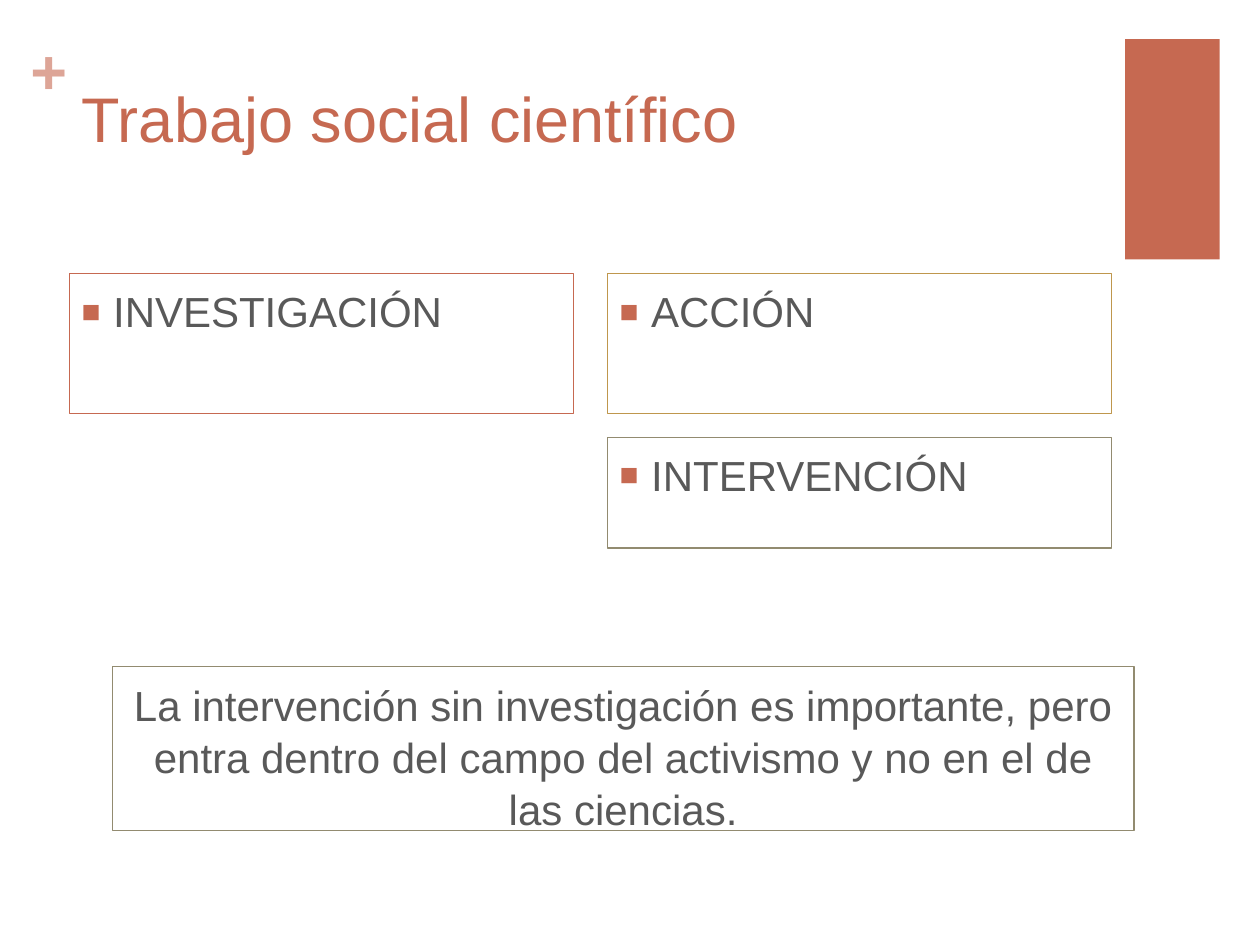
from dataclasses import dataclass
from typing import Optional

from lxml.etree import SubElement
from pptx import Presentation
from pptx.dml.color import RGBColor
from pptx.enum.shapes import MSO_SHAPE
from pptx.enum.text import MSO_ANCHOR, MSO_AUTO_SIZE, PP_ALIGN
from pptx.oxml.ns import qn
from pptx.util import Pt


@dataclass(frozen=True)
class Theme:
    font: str = "Arial"
    accent: str = "C66951"
    accent_light: str = "DDA597"
    gold: str = "BF974D"
    olive: str = "928B70"
    text: str = "595959"
    title_size: float = 36
    body_size: float = 24
    line_width: float = 0.75


@dataclass(frozen=True)
class Box:
    text: str
    left: float
    top: float
    width: float
    height: float
    line: str
    bulleted: bool = True


THEME = Theme()
LEFT_COL, RIGHT_COL, COL_WIDTH = 39.6, 347.04, 288
BOXES = [
    Box("ACCIÓN", RIGHT_COL, 156.24, COL_WIDTH, 79.92, THEME.gold),
    Box("INVESTIGACIÓN", LEFT_COL, 156.24, COL_WIDTH, 79.92, THEME.accent),
    Box("INTERVENCIÓN", RIGHT_COL, 249.84, COL_WIDTH, 63.36, THEME.olive),
    Box("La intervención sin investigación es importante, pero entra dentro del "
        "campo del activismo y no en el de las ciencias.",
        64.08, 380.88, 583.92, 93.6, THEME.olive, bulleted=False),
]


def add_run(p, text: str, size: float, color: str, bold: bool = False) -> None:
    r = p.add_run()
    r.text = text
    r.font.name = THEME.font
    r.font.size = Pt(size)
    r.font.bold = bold
    r.font.color.rgb = RGBColor.from_string(color)


def add_bullet(p) -> None:
    """Give the paragraph a square accent bullet with a hanging indent."""
    pPr = p._p.get_or_add_pPr()
    pPr.set("marL", str(Pt(18)))
    pPr.set("indent", str(Pt(-18)))
    SubElement(SubElement(pPr, qn("a:buClr")), qn("a:srgbClr")).set("val", THEME.accent)
    SubElement(pPr, qn("a:buSzPct")).set("val", "75000")
    SubElement(pPr, qn("a:buFont")).set("typeface", THEME.font)
    SubElement(pPr, qn("a:buChar")).set("char", "■")


def add_rect(s, left: float, top: float, width: float, height: float,
             fill: Optional[str] = None, line: Optional[str] = None):
    sp = s.shapes.add_shape(MSO_SHAPE.RECTANGLE, Pt(left), Pt(top), Pt(width), Pt(height))
    sp.shadow.inherit = False
    if fill:
        sp.fill.solid()
        sp.fill.fore_color.rgb = RGBColor.from_string(fill)
    else:
        sp.fill.background()
    if line:
        sp.line.color.rgb = RGBColor.from_string(line)
        sp.line.width = Pt(THEME.line_width)
    else:
        sp.line.fill.background()
    return sp


def add_box(s, box: Box) -> None:
    sp = add_rect(s, box.left, box.top, box.width, box.height, line=box.line)
    tf = sp.text_frame
    tf.word_wrap = True
    tf.vertical_anchor = MSO_ANCHOR.TOP
    tf.margin_top = Pt(6)
    p = tf.paragraphs[0]
    p.alignment = PP_ALIGN.LEFT if box.bulleted else PP_ALIGN.CENTER
    p.line_spacing = 1.04
    p.space_before = Pt(20)
    if box.bulleted:
        add_bullet(p)
    add_run(p, box.text, THEME.body_size, THEME.text)


def add_plus(s) -> None:
    tf = s.shapes.add_textbox(Pt(17.28), Pt(18), Pt(20.88), Pt(43.92)).text_frame
    tf.margin_left = tf.margin_top = tf.margin_right = tf.margin_bottom = 0
    add_run(tf.paragraphs[0], "+", THEME.title_size, THEME.accent_light, bold=True)


def set_title(s, text: str) -> None:
    sp = s.shapes.title
    sp.left, sp.top, sp.width, sp.height = Pt(LEFT_COL), Pt(38.16), Pt(594.72), Pt(87.84)
    tf = sp.text_frame
    tf.auto_size = MSO_AUTO_SIZE.NONE
    tf.vertical_anchor = MSO_ANCHOR.TOP
    tf.margin_top = Pt(7.2)
    p = tf.paragraphs[0]
    p.alignment = PP_ALIGN.LEFT
    add_run(p, text, THEME.title_size, THEME.accent)


def main() -> None:
    prs = Presentation()
    prs.slide_width, prs.slide_height = Pt(720), Pt(540)
    s = prs.slides.add_slide(prs.slide_layouts[5])
    add_rect(s, 642.96, 22.32, 54, 126, fill=THEME.accent)
    add_plus(s)
    set_title(s, "Trabajo social científico")
    for box in BOXES:
        add_box(s, box)
    prs.save("out.pptx")


if __name__ == "__main__":
    main()
